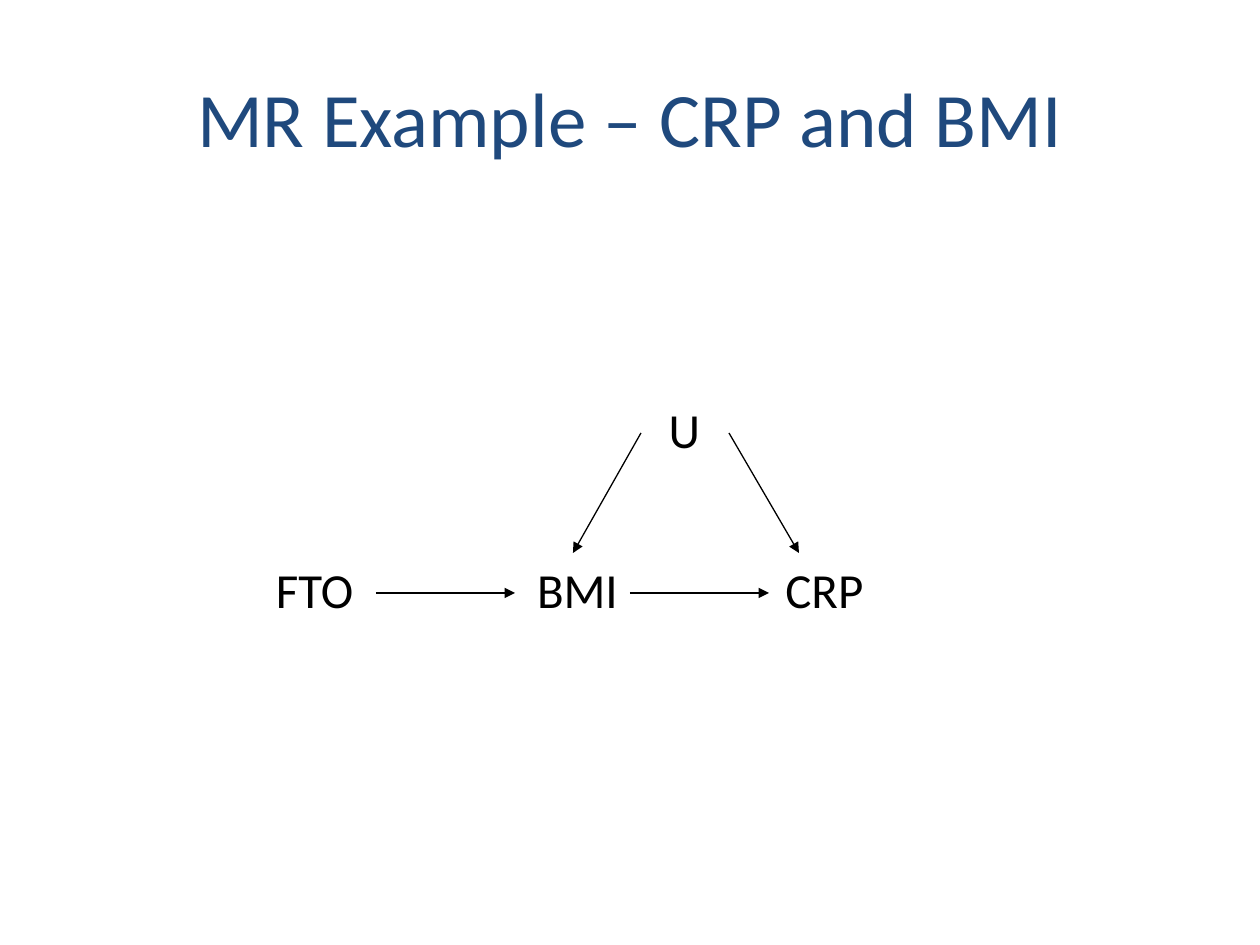
from pptx import Presentation, util as u
from pptx.dml.color import RGBColor
from pptx.enum import shapes, text
from pptx.oxml.ns import qn
from lxml import etree

SCALE = 914400 // 126
BLACK = "000000"
NODE_HEIGHT = 78


def px(n):
    return u.Emu(n * SCALE)


def rgb(value):
    return RGBColor.from_string(value)


def write(s, content, size=28, color=BLACK, anchor=text.MSO_ANCHOR.TOP, after=0):
    tf = s.text_frame
    tf.word_wrap = True
    tf.vertical_anchor = anchor
    p = tf.paragraphs[0]
    p.alignment = text.PP_ALIGN.CENTER
    p.space_after = u.Pt(after)
    r = p.add_run()
    r.text = content
    r.font.name = "Calibri"
    r.font.size = u.Pt(size)
    r.font.color.rgb = rgb(color)


def add_title(sp, content):
    s = sp.add_textbox(px(63), px(38), px(1134), px(157))
    write(s, content, size=44, color="1F497D", anchor=text.MSO_ANCHOR.MIDDLE)


def add_node(sp, label, x, y, width):
    s = sp.add_shape(shapes.MSO_SHAPE.RECTANGLE, px(x), px(y), px(width), px(NODE_HEIGHT))
    s.shadow.inherit = False
    s.fill.solid()
    s.fill.fore_color.rgb = rgb("FFFFFF")
    s.line.fill.background()
    write(s, label, after=10)


def add_arrow(sp, x1, y1, x2, y2):
    s = sp.add_connector(shapes.MSO_CONNECTOR.STRAIGHT, px(x1), px(y1), px(x2), px(y2))
    s.line.color.rgb = rgb(BLACK)
    s.line.width = u.Pt(0.75)
    etree.SubElement(s.line._get_or_add_ln(), qn("a:tailEnd"), type="triangle")
    etree.SubElement(s._element.spPr, qn("a:effectLst"))


def main():
    prs = Presentation()
    prs.slide_width, prs.slide_height = px(1260), px(945)
    sp = prs.slides.add_slide(prs.slide_layouts[6]).shapes

    add_title(sp, "MR Example – CRP and BMI")

    row_y, confounder_y = 553, 393
    for label, x, width in (("FTO", 253, 123), ("BMI", 520, 115), ("CRP", 761, 127)):
        add_node(sp, label, x, row_y, width)
    add_node(sp, "U", 641, confounder_y, 87)

    row_mid, confounder_mid = row_y + 40, confounder_y + 40
    for start, end in ((376, 515), (630, 769)):
        add_arrow(sp, start, row_mid, end, row_mid)
    for start, end in ((641, 573), (729, 799)):
        add_arrow(sp, start, confounder_mid, end, row_y)

    prs.save("out.pptx")


if __name__ == "__main__":
    main()
